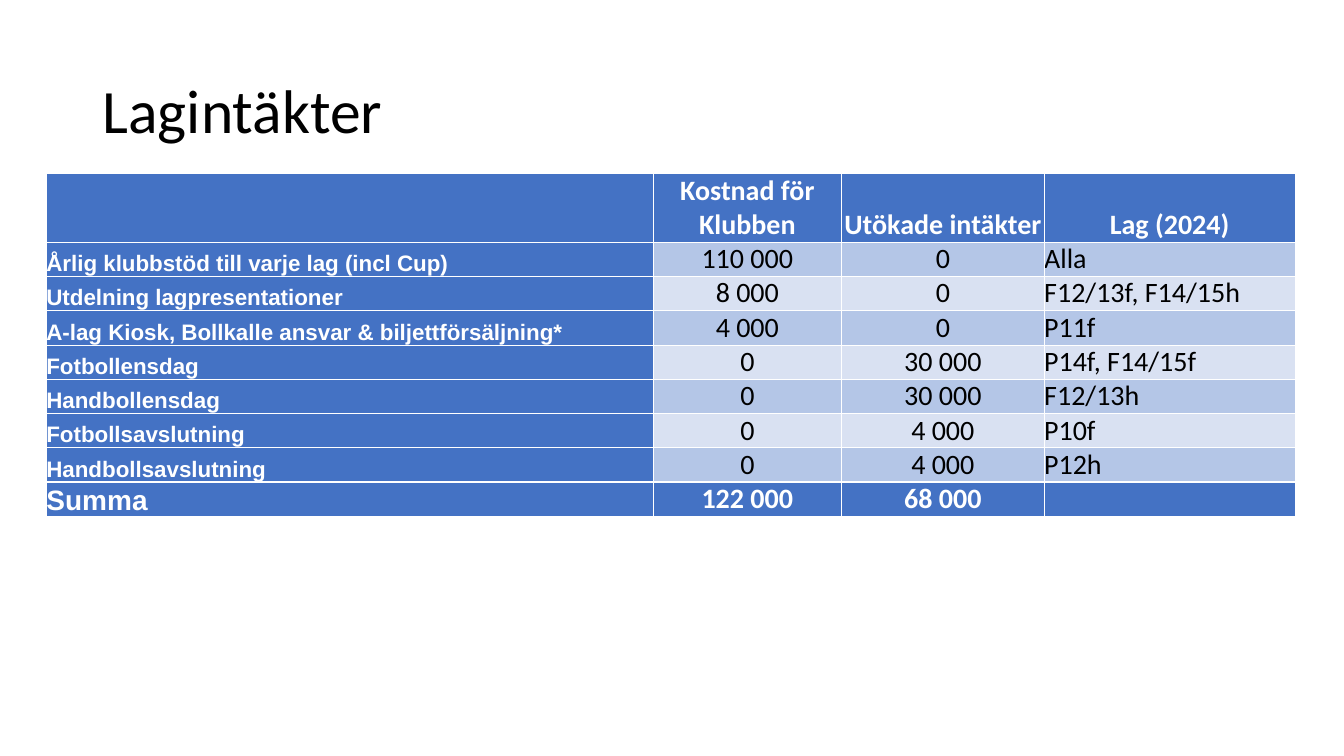
"""Build the Lagintäkter slide: a title above a table of team income."""
from lxml import etree
from pptx import Presentation
from pptx.dml.color import RGBColor
from pptx.enum.text import MSO_ANCHOR, PP_ALIGN
from pptx.oxml.ns import qn
from pptx.util import Pt

BOTTOM, MIDDLE = MSO_ANCHOR.BOTTOM, MSO_ANCHOR.MIDDLE
LEFT, CENTER = PP_ALIGN.LEFT, PP_ALIGN.CENTER
BLUE = RGBColor(0x44, 0x72, 0xC4)
MID_BLUE = RGBColor(0xB4, 0xC6, 0xE7)
PALE_BLUE = RGBColor(0xD9, 0xE1, 0xF2)
WHITE = RGBColor(0xFF, 0xFF, 0xFF)
BLACK = RGBColor(0, 0, 0)

ROWS = [
    ("", "Kostnad för Klubben", "Utökade intäkter", "Lag (2024)"),
    ("Årlig klubbstöd till varje lag (incl Cup)", "110 000", "0", "Alla"),
    ("Utdelning lagpresentationer", "8 000", "0", "F12/13f, F14/15h"),
    ("A-lag Kiosk, Bollkalle ansvar & biljettförsäljning*", "4 000", "0", "P11f"),
    ("Fotbollensdag", "0", "30 000", "P14f, F14/15f"),
    ("Handbollensdag", "0", "30 000", "F12/13h"),
    ("Fotbollsavslutning", "0", "4 000", "P10f"),
    ("Handbollsavslutning", "0", "4 000", "P12h"),
    ("Summa", "122 000", "68 000", ""),
]
COLUMN_WIDTHS = [433.44, 134.64, 144.72, 179.28]
HEADER_HEIGHT, ROW_HEIGHT = 49, 24.5
LAST = len(ROWS) - 1


def style_font(font, name, size, color, bold=False):
    font.name = name
    font.size = Pt(size)
    font.color.rgb = color
    font.bold = bold


def add_borders(cell, widths):
    properties = cell._tc.get_or_add_tcPr()
    for position, (side, width) in enumerate(widths.items()):
        line = etree.Element(qn(f"a:ln{side}"), w=str(Pt(width)))
        fill = etree.SubElement(line, qn("a:solidFill"))
        etree.SubElement(fill, qn("a:srgbClr"), val=str(WHITE))
        properties.insert(position, line)


deck = Presentation()
deck.slide_width, deck.slide_height = Pt(960), Pt(540)
page = deck.slides.add_slide(deck.slide_layouts[6])

title = page.shapes.add_textbox(Pt(66.24), Pt(28.8), Pt(828), Pt(104.4))
title.text_frame.word_wrap = True
title.text_frame.vertical_anchor = MIDDLE
title.text_frame.text = "Lagintäkter"
para = title.text_frame.paragraphs[0]
para.line_spacing = 0.9
style_font(para.runs[0].font, "Calibri", 44, BLACK)

table = page.shapes.add_table(
    len(ROWS), len(COLUMN_WIDTHS), Pt(33.12), Pt(123.84),
    Pt(sum(COLUMN_WIDTHS)), Pt(HEADER_HEIGHT + LAST * ROW_HEIGHT),
).table
for column, width in zip(table.columns, COLUMN_WIDTHS):
    column.width = Pt(width)

for r, texts in enumerate(ROWS):
    table.rows[r].height = Pt(ROW_HEIGHT if r else HEADER_HEIGHT)
    for c, text in enumerate(texts):
        strong = r in (0, LAST) or c == 0
        cell = table.cell(r, c)
        cell.margin_left = cell.margin_right = 0
        cell.margin_top = cell.margin_bottom = 0
        cell.vertical_anchor = BOTTOM
        cell.fill.solid()
        cell.fill.fore_color.rgb = BLUE if strong else (MID_BLUE if r % 2 else PALE_BLUE)
        add_borders(cell, {
            "L": 0.5,
            "R": 0.5,
            "T": 1.5 if r == LAST else 0.5,
            "B": 1.5 if r == LAST - 1 else 0.5,
        })
        cell.text = text
        para = cell.text_frame.paragraphs[0]
        para.alignment = CENTER if c in (1, 2) or r == 0 else LEFT
        for span in para.runs:
            style_font(
                span.font,
                "Calibri" if c else "Arial",
                16 if c == 0 and r < LAST else 20,
                WHITE if strong else BLACK,
                strong,
            )

deck.save("out.pptx")
